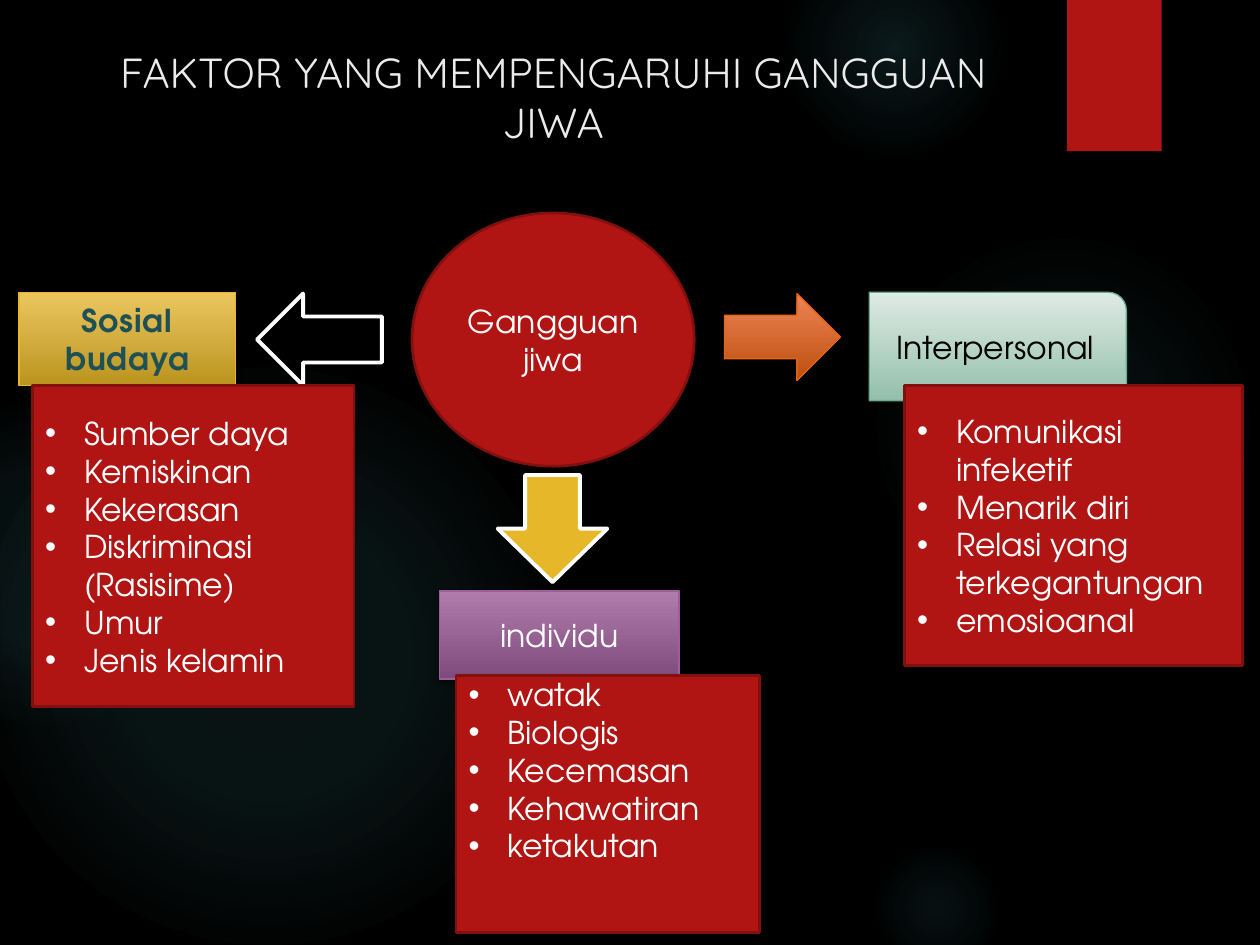
from lxml import etree
from pptx import Presentation
from pptx.dml.color import RGBColor
from pptx.enum.shapes import MSO_SHAPE as SHAPE
from pptx.enum.text import MSO_ANCHOR as ANCHOR, PP_ALIGN as ALIGN
from pptx.oxml import parse_xml
from pptx.oxml.ns import nsdecls, qn
from pptx.util import Inches, Pt

COL = ROW = Inches(0.1)  # grid of 100 columns by 75 rows
RED, DARK_RED, GOLD, WHITE = "B01513", "82100E", "E6B729", "FFFFFF"
BODY = {"name": "TeX Gyre Adventor", "size": Pt(18), "bold": False}


def rgb(value):
    return RGBColor.from_string(value)


def draw(kind, box, fill, line=None, width=0.75, shadow=False, glow=False):
    """Add a shape; fill is one colour or a list of (percent, colour, opacity)."""
    x, y, w, h = box
    sp = s.shapes.add_shape(kind, int(x * COL), int(y * ROW), int(w * COL), int(h * ROW))
    sp.shadow.inherit = False
    if line:
        sp.line.color.rgb = rgb(line)
        sp.line.width = Pt(width)
    else:
        sp.line.fill.background()
    spPr = sp._element.spPr
    if isinstance(fill, str):
        sp.fill.solid()
        sp.fill.fore_color.rgb = rgb(fill)
    else:
        stops = "".join(
            f'<a:gs pos="{pos * 1000}"><a:srgbClr val="{color}">'
            f'<a:alpha val="{alpha * 1000}"/></a:srgbClr></a:gs>'
            for pos, color, alpha in fill)
        course = ('<a:path path="circle"><a:fillToRect l="50000" t="50000" '
                  'r="50000" b="50000"/></a:path>' if glow
                  else '<a:lin ang="5400000" scaled="0"/>')
        sp.fill.background()
        spPr.replace(spPr.find(qn("a:noFill")), parse_xml(
            f'<a:gradFill {nsdecls("a")} rotWithShape="1">'
            f'<a:gsLst>{stops}</a:gsLst>{course}</a:gradFill>'))
    if shadow:
        outer = etree.SubElement(spPr.find(qn("a:effectLst")), qn("a:outerShdw"),
                                 blurRad=str(Pt(3)), dist=str(Pt(2)), dir="5400000")
        color = etree.SubElement(outer, qn("a:srgbClr"), val="000000")
        etree.SubElement(color, qn("a:alpha"), val="45000")
    return sp


prs = Presentation()
prs.slide_width, prs.slide_height = 100 * COL, 75 * ROW
s = prs.slides.add_slide(prs.slide_layouts[6])
s.background.fill.solid()
s.background.fill.fore_color.rgb = rgb("000000")

# Soft glows: left, top, diameter, inner and middle opacity, end of fade
for x, y, size, inner, middle, end in [
        (68.9, 18.3, 30.8, 7, 6, 69), (62.2, -5, 17.5, 14, 7, 73),
        (68.9, 66.7, 10.8, 9, 5, 66), (-1.7, 29.2, 45.8, 11, 10, 75),
        (-9.2, 31.7, 25.8, 8, 8, 72)]:
    fade = [(0, "50B9C1", inner), (36, "50B9C1", middle), (end, "50B9C1", 0)]
    draw(SHAPE.OVAL, (x, y, size, size), fade, glow=True)

# Corner tab
draw(SHAPE.RECTANGLE, (84.7, 0, 7.5, 12), RED, shadow=True)

# Title
tf = s.shapes.add_textbox(int(5.3 * COL), int(3.1 * ROW),
                          int(77.2 * COL), int(9.1 * ROW)).text_frame
tf.word_wrap = True
tf.vertical_anchor = ANCHOR.MIDDLE
p = tf.paragraphs[0]
p.alignment = ALIGN.CENTER
r = p.add_run()
r.text = "FAKTOR YANG MEMPENGARUHI GANGGUAN JIWA"
for key, value in {"name": "Quicksand", "size": Pt(24)}.items():
    setattr(r.font, key, value)
r.font.color.rgb = rgb("EBEBEB")

# Arrows out of the centre
draw(SHAPE.UP_ARROW, (39.5, 37.7, 8.7, 8.5), GOLD, WHITE, 2.25).rotation = 180
draw(SHAPE.LEFT_ARROW, (20.4, 23.3, 9.9, 7.3), "000000", WHITE, 2.25)
draw(SHAPE.RIGHT_ARROW, (57.5, 23.3, 9.2, 6.9),
     [(0, "EE8455", 100), (100, "BC4F0E", 100)], "EA6312", shadow=True)

# Centre and factor headings
for text, kind, box, fill, line, width, shadow, color, bold in [
        ("Gangguan jiwa", SHAPE.OVAL, (32.7, 16.9, 22.4, 20.1),
         RED, DARK_RED, 1.5, False, WHITE, False),
        ("individu", SHAPE.RECTANGLE, (34.9, 46.9, 19, 7),
         [(0, "AF7CAC", 100), (100, "7F4B7C", 100)], "9E5E9B", 0.75, True, WHITE, False),
        ("Interpersonal", SHAPE.ROUND_1_RECTANGLE, (69, 23.2, 20.4, 8.6),
         [(0, "DEEAE4", 100), (100, "93C0AC", 100)], "6AAC90", 0.75, False, "000000", False),
        ("Sosial budaya", SHAPE.RECTANGLE, (1.5, 23.2, 17.2, 7.4),
         [(0, "EBC65F", 100), (100, "BB941F", 100)], GOLD, 0.75, True, "1E5155", True)]:
    tf = draw(kind, box, fill, line, width, shadow).text_frame
    tf.word_wrap = True
    tf.vertical_anchor = ANCHOR.MIDDLE
    p = tf.paragraphs[0]
    p.alignment = ALIGN.CENTER
    r = p.add_run()
    r.text = text
    for key, value in (BODY | {"bold": bold}).items():
        setattr(r.font, key, value)
    r.font.color.rgb = rgb(color)
    if bold:
        r.font._element.set("spc", "50")

# Bulleted factor lists
for box, anchor, items in [
        ((36.2, 53.6, 24.1, 20.4), ANCHOR.TOP,
         ["watak", "Biologis", "Kecemasan", "Kehawatiran", "ketakutan"]),
        ((71.8, 30.6, 26.8, 22.2), ANCHOR.MIDDLE,
         ["Komunikasi infeketif", "Menarik diri", "Relasi yang terkegantungan",
          "emosioanal"]),
        ((2.6, 30.6, 25.5, 25.5), ANCHOR.MIDDLE,
         ["Sumber daya", "Kemiskinan", "Kekerasan", "Diskriminasi (Rasisime)",
          "Umur", "Jenis kelamin"])]:
    tf = draw(SHAPE.RECTANGLE, box, RED, DARK_RED, 1.5).text_frame
    tf.word_wrap = True
    tf.vertical_anchor = anchor
    if anchor == ANCHOR.TOP:
        tf.margin_top = 0
    for i, item in enumerate(items):
        p = tf.add_paragraph() if i else tf.paragraphs[0]
        p.alignment = ALIGN.LEFT
        pPr = p._p.get_or_add_pPr()
        pPr.set("marL", str(Inches(0.31)))
        pPr.set("indent", str(-Inches(0.31)))
        etree.SubElement(pPr, qn("a:buFont"), typeface="Arial")
        etree.SubElement(pPr, qn("a:buChar"), char="•")
        r = p.add_run()
        r.text = item
        for key, value in BODY.items():
            setattr(r.font, key, value)
        r.font.color.rgb = rgb(WHITE)

prs.save("out.pptx")
